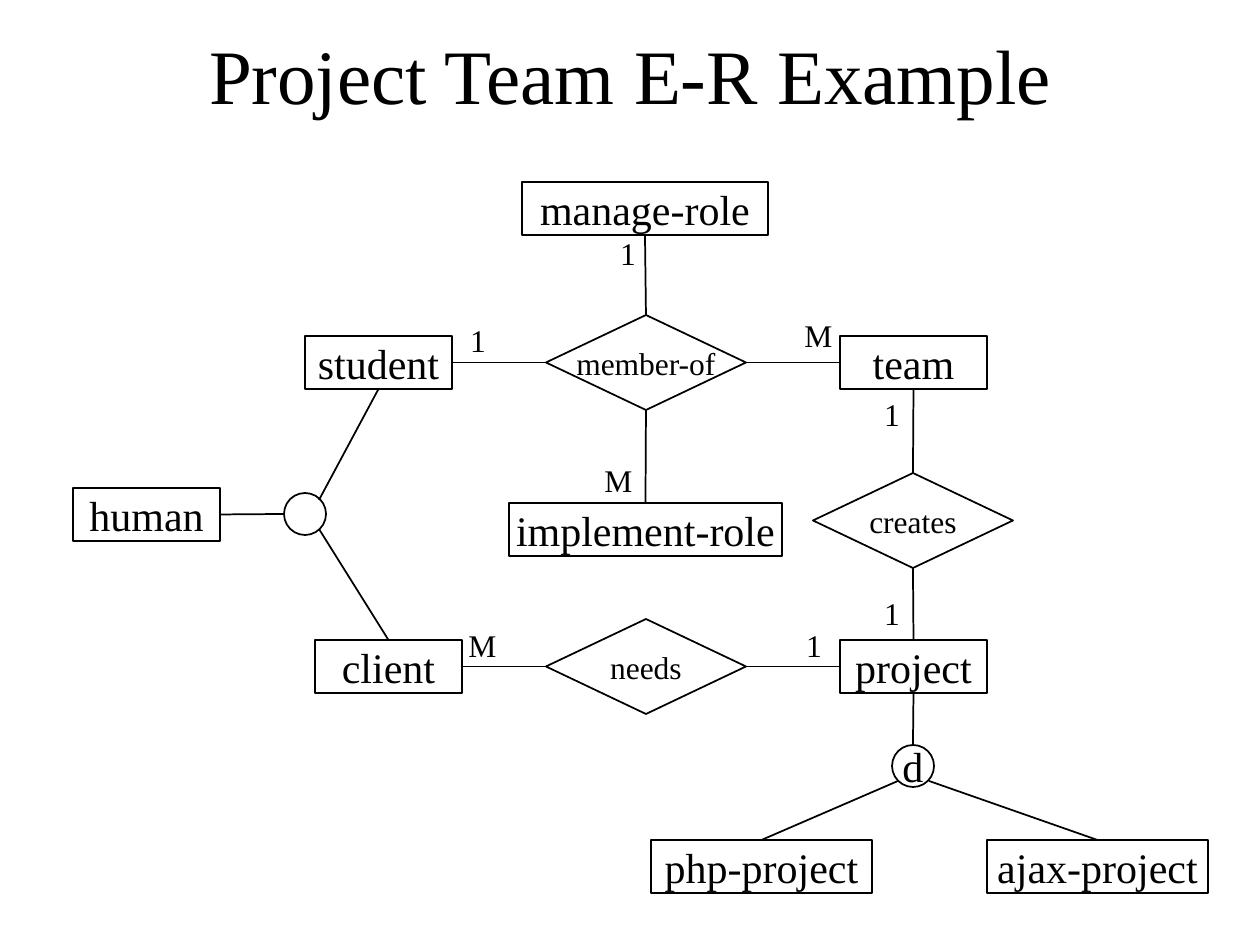
from pptx import Presentation
from pptx.dml.color import RGBColor
from pptx.enum.shapes import MSO_CONNECTOR as Connector, MSO_SHAPE as Shape
from pptx.enum.text import MSO_ANCHOR as Anchor, MSO_AUTO_SIZE as AutoSize, PP_ALIGN as Align
from pptx.oxml.ns import qn
from pptx.util import Emu, Pt
from lxml.etree import SubElement

BLACK = RGBColor(0, 0, 0)
TOP, LEFT, BOTTOM, RIGHT = range(4)


def px(length):
    return Emu(round(length * 914400 / 126))


class Diagram:
    font_name = "Times New Roman"
    line_width = Pt(1)
    entity_height = 53
    relation_size = (200, 95)
    circle_size = 42

    def __init__(self, slide):
        self.slide = slide

    def set_text(self, shape, text, size, wrap=False):
        text_frame = shape.text_frame
        text_frame.text = text
        text_frame.word_wrap = wrap
        paragraph = text_frame.paragraphs[0]
        paragraph.alignment = Align.CENTER
        for run in paragraph.runs:
            run.font.name = self.font_name
            run.font.size = Pt(size)
            run.font.color.rgb = BLACK

    def title(self, text, left, top, width, height):
        shape = self.slide.shapes.title
        shape.left, shape.top, shape.width, shape.height = map(px, (left, top, width, height))
        self.set_text(shape, text, 44, wrap=True)
        shape.text_frame.auto_size = AutoSize.NONE
        shape.text_frame.vertical_anchor = Anchor.MIDDLE

    def node(self, kind, left, top, width, height, text, size):
        shape = self.slide.shapes.add_shape(kind, *map(px, (left, top, width, height)))
        shape.shadow.inherit = False
        shape.fill.background()
        shape.line.color.rgb = BLACK
        shape.line.width = self.line_width
        if text:
            self.set_text(shape, text, size)
            shape.text_frame.vertical_anchor = Anchor.MIDDLE
        return shape

    def entity(self, text, left, top, width=147):
        return self.node(Shape.RECTANGLE, left, top, width, self.entity_height, text, 24)

    def relation(self, text, left, top):
        return self.node(Shape.DIAMOND, left, top, *self.relation_size, text, 18)

    def circle(self, left, top, text=""):
        return self.node(Shape.OVAL, left, top, self.circle_size, self.circle_size, text, 24)

    def cardinality(self, text, left, top):
        width = 53 if text == "M" else 42
        shape = self.slide.shapes.add_textbox(*map(px, (left, top, width, 50)))
        self.set_text(shape, text, 18)
        shape.text_frame.auto_size = AutoSize.SHAPE_TO_FIT_TEXT

    def spoke(self, shape, side, x=0, y=0):
        end = px(x), px(y)
        connector = self.slide.shapes.add_connector(Connector.STRAIGHT, *end, *end)
        connector.begin_connect(shape, side)
        connector.line.color.rgb = BLACK
        connector.line.width = self.line_width
        SubElement(connector._element.spPr, qn("a:effectLst"))
        return connector

    def join(self, start, start_side, end, end_side):
        self.spoke(start, start_side).end_connect(end, end_side)


def main():
    presentation = Presentation()
    presentation.slide_width, presentation.slide_height = px(1260), px(945)
    diagram = Diagram(presentation.slides.add_slide(presentation.slide_layouts[5]))
    diagram.title("Project Team E-R Example", 95, 32, 1071, 84)

    student = diagram.entity("student", 305, 336)
    team = diagram.entity("team", 840, 336)
    human = diagram.entity("human", 73, 488)
    client = diagram.entity("client", 315, 640)
    project = diagram.entity("project", 840, 640)
    manage_role = diagram.entity("manage-role", 522, 182, 246)
    implement_role = diagram.entity("implement-role", 509, 503, 273)
    php_project = diagram.entity("php-project", 651, 840, 221)
    ajax_project = diagram.entity("ajax-project", 987, 840, 221)

    member_of = diagram.relation("member-of", 546, 315)
    creates = diagram.relation("creates", 813, 473)
    needs = diagram.relation("needs", 546, 619)

    diagram.circle(284, 493)
    disjoint = diagram.circle(892, 745, "d")

    for link in (
        (member_of, LEFT, student, RIGHT),
        (member_of, RIGHT, team, LEFT),
        (member_of, TOP, manage_role, BOTTOM),
        (member_of, BOTTOM, implement_role, TOP),
        (team, BOTTOM, creates, TOP),
        (creates, BOTTOM, project, TOP),
        (client, RIGHT, needs, LEFT),
        (needs, RIGHT, project, LEFT),
        (project, BOTTOM, disjoint, TOP),
    ):
        diagram.join(*link)

    for spoke in (
        (human, RIGHT, 284, 514),
        (student, BOTTOM, 319, 500),
        (client, TOP, 319, 529),
        (php_project, TOP, 898, 781),
        (ajax_project, TOP, 929, 781),
    ):
        diagram.spoke(*spoke)

    for cardinality in (
        ("1", 607, 228),
        ("M", 792, 310),
        ("M", 592, 455),
        ("1", 457, 315),
        ("1", 871, 389),
        ("1", 871, 588),
        ("M", 456, 620),
        ("1", 793, 620),
    ):
        diagram.cardinality(*cardinality)

    presentation.save("out.pptx")


if __name__ == "__main__":
    main()
